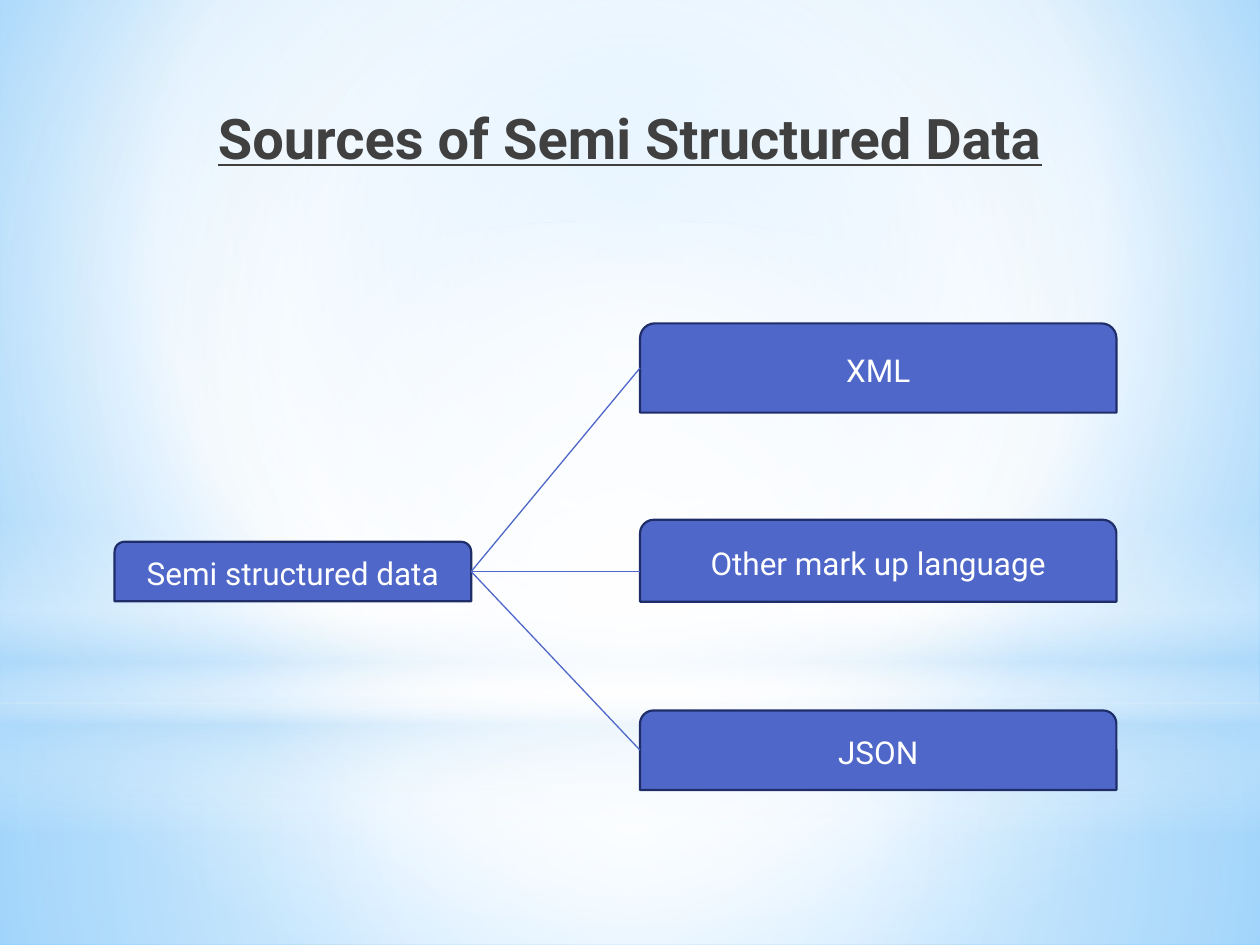
"""Build a slide on the sources of semi structured data."""
from lxml.etree import SubElement as Sub
from pptx import Presentation
from pptx.dml.color import RGBColor
from pptx.enum.shapes import MSO_CONNECTOR as Link, MSO_SHAPE as Shape
from pptx.enum.text import MSO_ANCHOR as Anchor, PP_ALIGN as Align
from pptx.oxml.ns import qn
from pptx.util import Pt

FONT = "Roboto"
WHITE = RGBColor(0xFF, 0xFF, 0xFF)
GREY = RGBColor(0x40, 0x40, 0x40)
BLUE = RGBColor(0x4E, 0x67, 0xC8)
NAVY = RGBColor(0x1F, 0x2E, 0x69)
PALE = RGBColor(0xB4, 0xDC, 0xFA)
SKY = RGBColor(0x9E, 0xD5, 0xFF)
DEEP = RGBColor(0x5B, 0xB9, 0xFF)

WIDE, HIGH = 720, 540
TITLE = "Sources of Semi Structured Data"
ROOT = ("Semi structured data", 65.5, 309.6, 203.75, 34)
LEFT, SPAN = 365.75, 272.25
LEAVES = [("XML", 184.8, 51), ("Other mark up language", 297, 46.8), ("JSON", 406, 45.4)]
MID = (50, 50, 50, 50)
BACK = [(0, SKY, 100), (60, WHITE, 100), (100, DEEP, 100)]
GLOWS = [
    (Shape.RECTANGLE, 401.75, 138.25, MID,
     [(0, WHITE, 91), (37, WHITE, 76), (100, PALE, 79)]),
    (Shape.RECTANGLE, 0, 401.75, MID,
     [(0, WHITE, 89), (48, WHITE, 62), (100, PALE, 79)]),
    (Shape.RECTANGLE, 296.75, 180, None,
     [(0, WHITE, 0), (29, WHITE, 30), (45, PALE, 40), (55, WHITE, 26),
      (65, PALE, 60), (100, WHITE, 0)]),
    (Shape.OVAL, 126, 401.75, MID, [(0, WHITE, 100), (56, WHITE, 0)]),
]


def shade(owner, fill, stops, focus):
    fill.solid()
    old = owner.find(".//" + qn("a:solidFill"))
    grad = old.makeelement(qn("a:gradFill"), {"rotWithShape": "1"})
    old.getparent().replace(old, grad)
    group = Sub(grad, qn("a:gsLst"))
    for place, color, alpha in stops:
        stop = Sub(group, qn("a:gs"), pos=str(place * 1000))
        tone = Sub(stop, qn("a:srgbClr"), val=str(color))
        if alpha < 100:
            Sub(tone, qn("a:alpha"), val=str(alpha * 1000))
    if focus:
        way = Sub(grad, qn("a:path"), {"path": "circle"})
        sides = {side: str(part * 1000) for side, part in zip("ltrb", focus)}
        Sub(way, qn("a:fillToRect"), sides)
    else:
        Sub(grad, qn("a:lin"), ang="5400000", scaled="0")


def write(shape, text, size, color, anchor):
    frame = shape.text_frame
    frame.word_wrap = True
    frame.vertical_anchor = anchor
    para = frame.paragraphs[0]
    para.text = text
    para.alignment = Align.CENTER
    font = para.font
    font.name, font.size = FONT, Pt(size)
    font.color.rgb = color
    return font


def add_node(slide, text, left, top, width, height):
    node = slide.shapes.add_shape(
        Shape.ROUND_2_SAME_RECTANGLE, Pt(left), Pt(top), Pt(width), Pt(height))
    node.shadow.inherit = False
    node.fill.solid()
    node.fill.fore_color.rgb = BLUE
    node.line.color.rgb = NAVY
    node.line.width = Pt(1.25)
    write(node, text, 18, WHITE, Anchor.MIDDLE)


def add_link(slide, start, end):
    link = slide.shapes.add_connector(Link.STRAIGHT, *map(Pt, start + end))
    link.line.color.rgb = BLUE
    link.line.width = Pt(0.75)
    Sub(link._element.spPr, qn("a:effectLst"))


def main():
    deck = Presentation()
    deck.slide_width, deck.slide_height = Pt(WIDE), Pt(HIGH)
    slide = deck.slides.add_slide(deck.slide_layouts[6])
    shade(slide.element, slide.background.fill, BACK, (20, 10, 20, 60))
    for kind, top, height, focus, stops in GLOWS:
        glow = slide.shapes.add_shape(kind, 0, Pt(top), Pt(WIDE), Pt(height))
        glow.shadow.inherit = False
        glow.line.fill.background()
        shade(glow._element, glow.fill, stops, focus)

    title = slide.shapes.add_textbox(Pt(36), Pt(55.5), Pt(648), Pt(67))
    font = write(title, TITLE, 32, GREY, Anchor.TOP)
    font.bold = font.underline = True

    add_node(slide, *ROOT)
    _, left, top, width, height = ROOT
    start = (left + width, top + height / 2)
    for text, top, height in LEAVES:
        add_node(slide, text, LEFT, top, SPAN, height)
    for text, top, height in LEAVES:
        level = top + height / 2
        if abs(level - start[1]) < 10:
            level = start[1]
        add_link(slide, start, (LEFT, level))
    deck.save("out.pptx")


if __name__ == "__main__":
    main()
